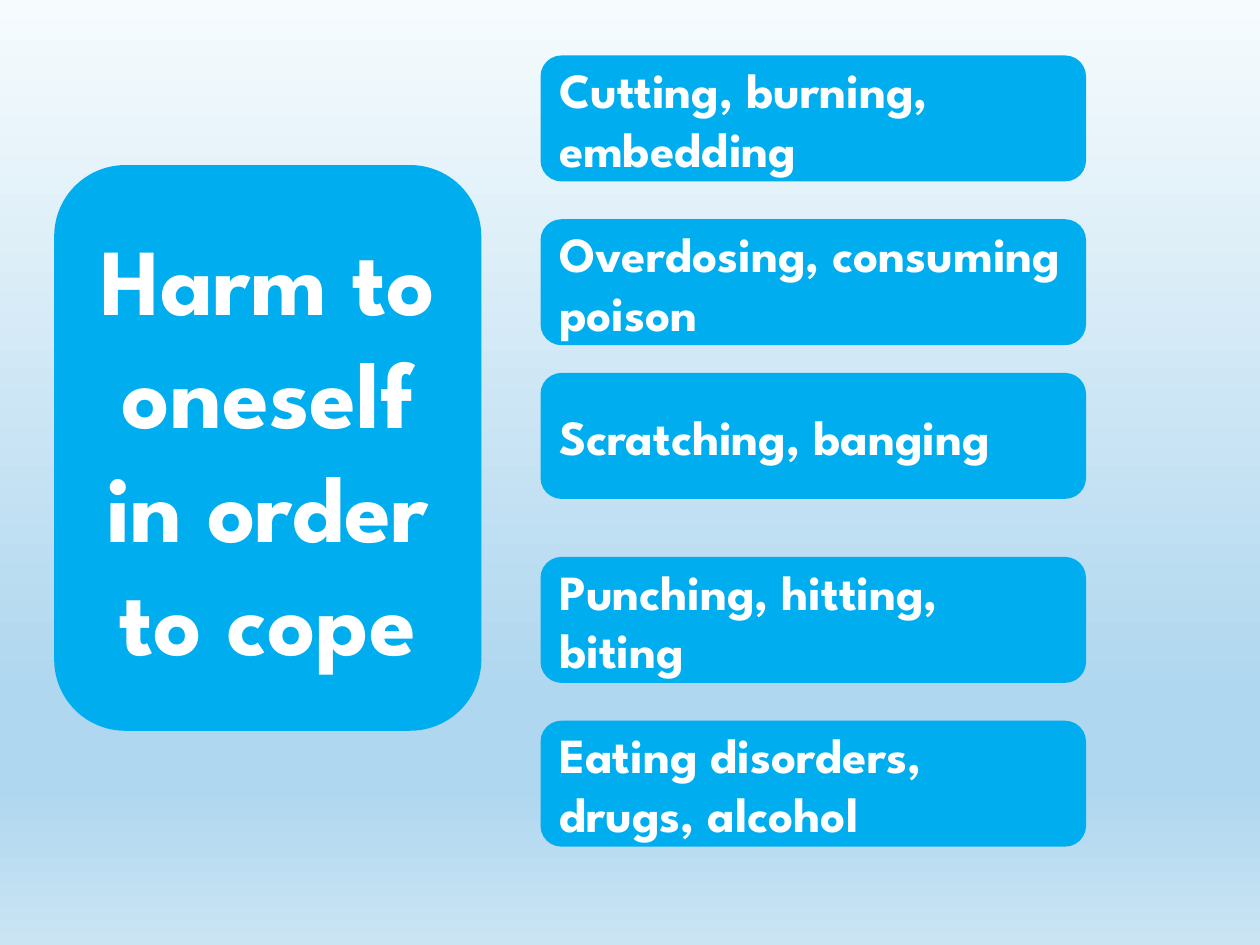
from copy import deepcopy
from dataclasses import dataclass

from pptx import Presentation
from pptx.dml.color import RGBColor as RGB
from pptx.enum.shapes import MSO_SHAPE as SHAPE
from pptx.enum.text import MSO_ANCHOR as ANCHOR, PP_ALIGN as ALIGN
from pptx.oxml.ns import qn
from pptx.util import Inches, Pt


@dataclass(frozen=True)
class Theme:
    font: str = "League Spartan"
    box: str = "00AEEF"
    text: str = "FFFFFF"
    heading_size: int = 54
    item_size: int = 28
    backdrop: tuple = (
        (0, "F6FBFD"), (0.74, "AFD7EF"), (0.83, "AFD7EF"), (1, "CAE4F4"))


def write(tf, text, *, font, size, color, bold=True, align=ALIGN.LEFT):
    p = tf.paragraphs[0]
    p.alignment = align
    r = p.add_run()
    r.text = text
    r.font.name = font
    r.font.size = Pt(size)
    r.font.bold = bold
    r.font.color.rgb = RGB.from_string(color)


class Painter:
    def __init__(self, slide, theme):
        self.slide = slide
        self.theme = theme

    def backdrop(self):
        """Fill the background with the theme's gradient, top to bottom."""
        fill = self.slide.background.fill
        fill.gradient()
        fill.gradient_angle = 270
        stop_list = next(self.slide.element.iter(qn("a:gsLst")))
        while len(stop_list) < len(self.theme.backdrop):
            stop_list.append(deepcopy(stop_list[0]))
        for stop, (position, color) in zip(fill.gradient_stops, self.theme.backdrop):
            stop.position = position
            stop.color.rgb = RGB.from_string(color)

    def box(self, text, left, top, width, height, size, align=ALIGN.LEFT):
        sp = self.slide.shapes.add_shape(
            SHAPE.ROUNDED_RECTANGLE,
            Inches(left), Inches(top), Inches(width), Inches(height))
        sp.shadow.inherit = False
        sp.fill.solid()
        sp.fill.fore_color.rgb = RGB.from_string(self.theme.box)
        sp.line.fill.background()
        tf = sp.text_frame
        tf.word_wrap = True
        tf.vertical_anchor = ANCHOR.MIDDLE
        write(tf, text, font=self.theme.font, size=size,
              color=self.theme.text, align=align)


ITEMS = (
    (0.44, "Cutting, burning, embedding"),
    (1.74, "Overdosing, consuming poison"),
    (2.96, "Scratching, banging"),
    (4.42, "Punching, hitting, biting"),
    (5.72, "Eating disorders, drugs, alcohol"),
)


def main():
    prs = Presentation()
    prs.slide_width, prs.slide_height = Inches(10), Inches(7.5)
    theme = Theme()
    painter = Painter(prs.slides.add_slide(prs.slide_layouts[6]), theme)
    painter.backdrop()
    painter.box("Harm to oneself in order to cope", 0.43, 1.31, 3.39, 4.49,
                theme.heading_size, ALIGN.CENTER)
    for top, text in ITEMS:
        painter.box(text, 4.29, top, 4.33, 1, theme.item_size)
    prs.save("out.pptx")


if __name__ == "__main__":
    main()
